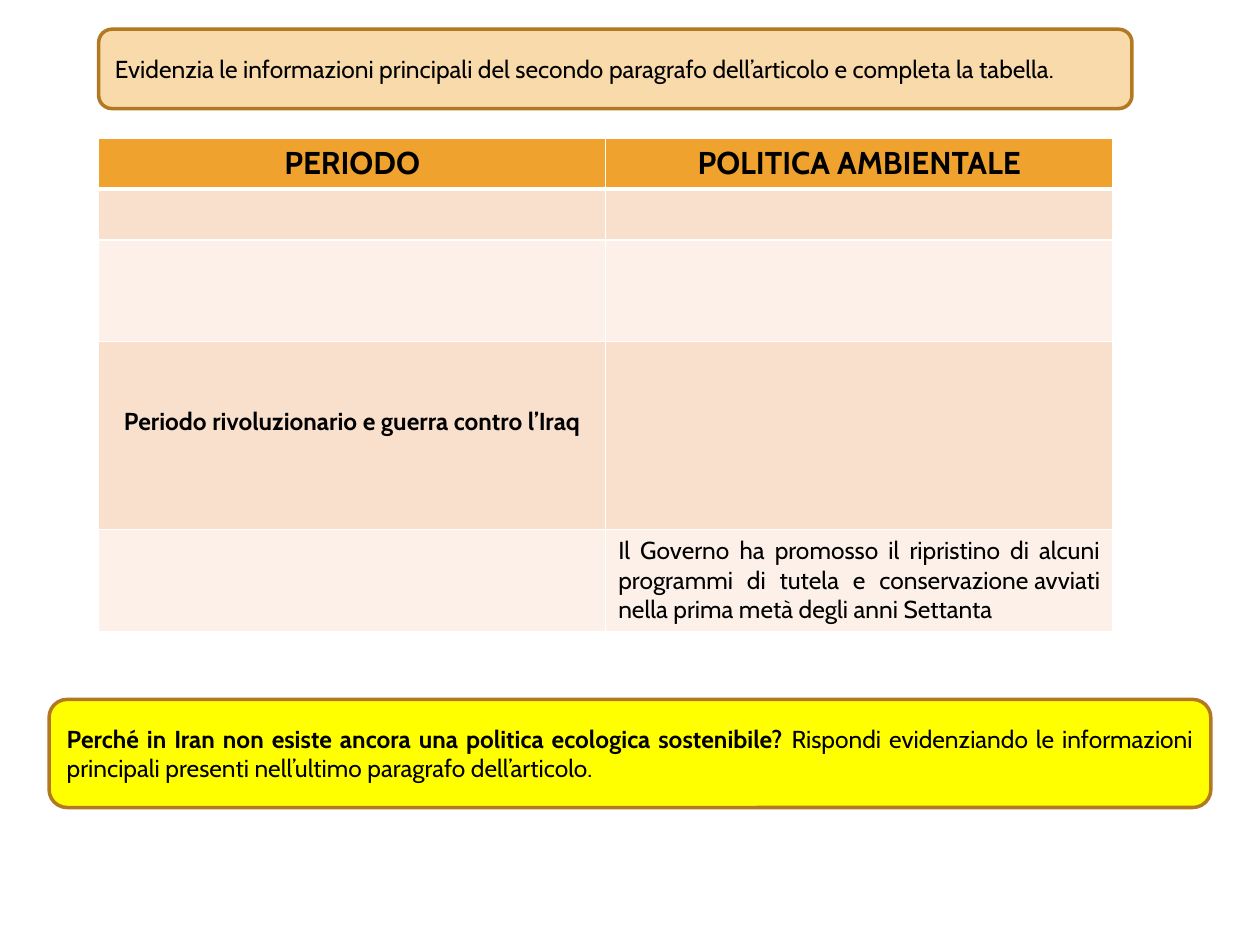
from dataclasses import dataclass

from lxml.etree import SubElement
from pptx import Presentation
from pptx.dml.color import RGBColor as Rgb
from pptx.enum.shapes import MSO_SHAPE as Shape
from pptx.enum.text import MSO_ANCHOR as Anchor, PP_ALIGN as Align
from pptx.oxml.ns import qn
from pptx.util import Cm, Pt


@dataclass(frozen=True)
class Theme:
    """Colours, font and type sizes of the worksheet."""
    font: str = "Cabin"
    heading_size: int = 18
    body_size: int = 14
    ink: str = "000000"
    header: str = "F0A22E"
    bands: tuple = ("F9E0CD", "FCF0E8")
    grid: str = "FFFFFF"
    outline: str = "B27822"
    instruction: str = "F9DAAB"
    question: str = "FFFF00"


THEME = Theme()
ROW_HEIGHTS = (1.03, 1.03, 2.04, 3.79, 2.03)
PERIOD_TOP_MARGIN = 1.33
ENTRIES = (
    ("PERIODO", "POLITICA AMBIENTALE"),
    ("", ""),
    ("", ""),
    ("Periodo rivoluzionario e guerra contro l’Iraq", ""),
    ("", "Il Governo ha promosso il ripristino di alcuni programmi di tutela "
         "e conservazione\u00a0avviati nella prima metà degli anni Settanta"),
)


def write(paragraph, runs, size, align):
    """Fill a paragraph with (text, bold) runs."""
    paragraph.alignment = align
    for text, bold in runs:
        run = paragraph.add_run()
        run.text = text
        run.font.name = THEME.font
        run.font.size = Pt(size)
        run.font.bold = bold
        run.font.color.rgb = Rgb.from_string(THEME.ink)


def add_prompt(slide, box, fill, runs):
    """Place a rounded prompt box with justified text."""
    prompt = slide.shapes.add_shape(Shape.ROUNDED_RECTANGLE, *map(Cm, box))
    prompt.shadow.inherit = False
    prompt.fill.solid()
    prompt.fill.fore_color.rgb = Rgb.from_string(fill)
    prompt.line.color.rgb = Rgb.from_string(THEME.outline)
    prompt.line.width = Pt(2)
    frame = prompt.text_frame
    frame.word_wrap = True
    frame.vertical_anchor = Anchor.MIDDLE
    write(frame.paragraphs[0], runs, THEME.body_size, Align.JUSTIFY)


def style_cell(cell, fill, bottom_width):
    """Give a cell its fill and grid lines."""
    cell.fill.solid()
    cell.fill.fore_color.rgb = Rgb.from_string(fill)
    properties = cell._tc.get_or_add_tcPr()
    widths = {"a:lnL": 1, "a:lnR": 1, "a:lnT": 1, "a:lnB": bottom_width}
    for position, (edge, width) in enumerate(widths.items()):
        border = SubElement(properties, qn(edge), w=str(Pt(width)))
        SubElement(SubElement(border, qn("a:solidFill")), qn("a:srgbClr"), val=THEME.grid)
        properties.insert(position, border)


def add_policy_table(slide, left, top, width):
    """Place the table of periods and environmental policies."""
    columns = len(ENTRIES[0])
    table = slide.shapes.add_table(
        len(ENTRIES), columns, Cm(left), Cm(top), Cm(width), Cm(sum(ROW_HEIGHTS))).table
    for row, (height, entries) in enumerate(zip(ROW_HEIGHTS, ENTRIES)):
        table.rows[row].height = Cm(height)
        is_header = row == 0
        fill = THEME.header if is_header else THEME.bands[(row - 1) % 2]
        size = THEME.heading_size if is_header else THEME.body_size
        for column, entry in enumerate(entries):
            cell = table.cell(row, column)
            style_cell(cell, fill, 3 if is_header else 1)
            if not entry:
                continue
            is_period = column == 0
            centred = is_header or is_period
            if is_period and not is_header:
                cell.margin_top = Cm(PERIOD_TOP_MARGIN)
            write(cell.text_frame.paragraphs[0], [(entry, centred)], size,
                  Align.CENTER if centred else Align.JUSTIFY)


def main():
    """Build and save the worksheet slide."""
    deck = Presentation()
    deck.slide_width, deck.slide_height = Cm(25.4), Cm(19.05)
    slide = deck.slides.add_slide(deck.slide_layouts[6])
    add_policy_table(slide, 1.99, 2.78, 20.44)
    add_prompt(slide, (1.99, 0.59, 20.83, 1.6), THEME.instruction, [
        ("Evidenzia le informazioni principali del secondo paragrafo "
         "dell’articolo e completa la tabella.", False)])
    add_prompt(slide, (0.99, 14.1, 23.42, 2.18), THEME.question, [
        ("Perché in Iran non esiste ancora una politica ecologica sostenibile? ", True),
        ("Rispondi evidenziando le informazioni principali presenti "
         "nell’ultimo paragrafo dell’articolo.", False)])
    deck.save("out.pptx")


if __name__ == "__main__":
    main()
